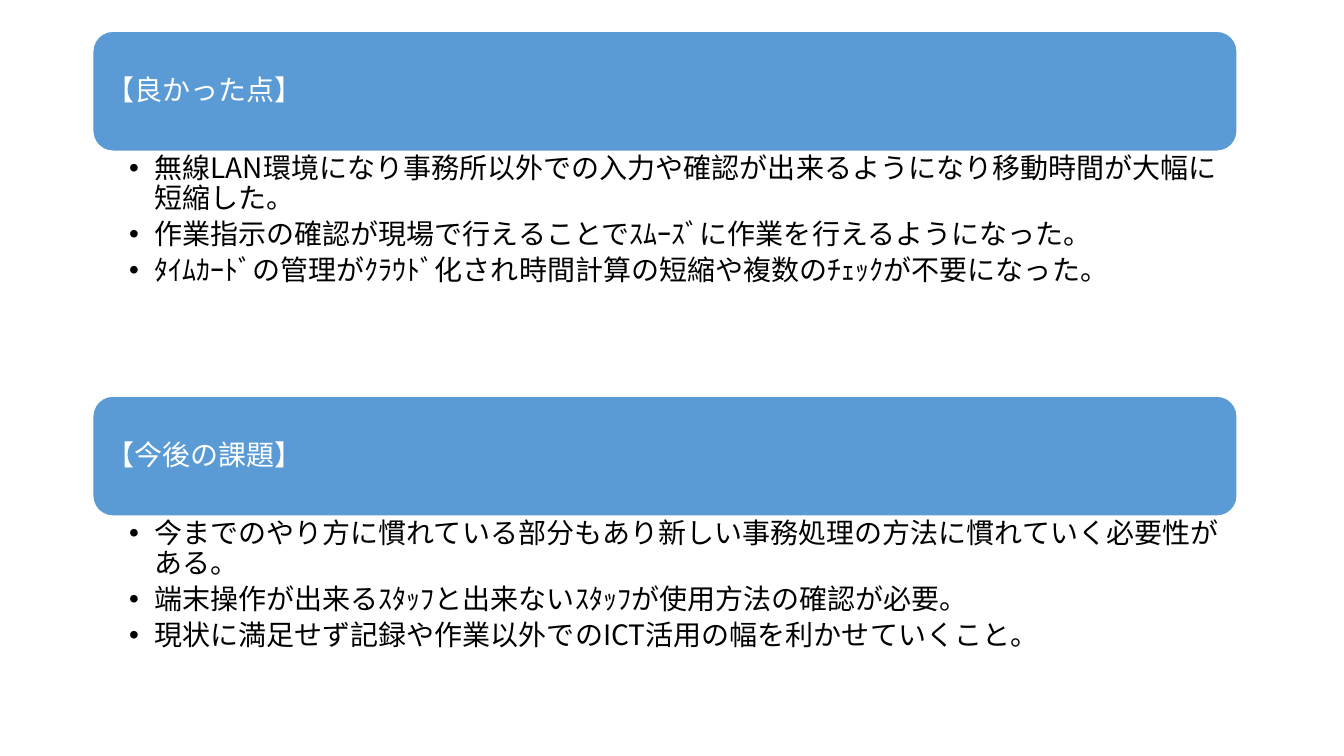
"""Build a slide of good points and open issues, each under a banner."""
from dataclasses import dataclass

from lxml import etree
from pptx import Presentation
from pptx.dml.color import RGBColor
from pptx.enum.shapes import MSO_SHAPE
from pptx.enum.text import MSO_ANCHOR, MSO_AUTO_SIZE, PP_ALIGN
from pptx.oxml.ns import qn
from pptx.util import Inches, Pt

ROUND = MSO_SHAPE.ROUNDED_RECTANGLE
TOP, MIDDLE = MSO_ANCHOR.TOP, MSO_ANCHOR.MIDDLE
LEFT = PP_ALIGN.LEFT
FIXED = MSO_AUTO_SIZE.NONE

PARTS = [
    ("【良かった点】", [
        "無線LAN環境になり事務所以外での入力や確認が出来るようになり移動時間が大幅に短縮した。",
        "作業指示の確認が現場で行えることでｽﾑｰｽﾞに作業を行えるようになった。",
        "ﾀｲﾑｶｰﾄﾞの管理がｸﾗｳﾄﾞ化され時間計算の短縮や複数のﾁｪｯｸが不要になった。",
    ], 2.43),
    ("【今後の課題】", [
        "今までのやり方に慣れている部分もあり新しい事務処理の方法に慣れていく必要性がある。",
        "端末操作が出来るｽﾀｯﾌと出来ないｽﾀｯﾌが使用方法の確認が必要。",
        "現状に満足せず記録や作業以外でのICT活用の幅を利かせていくこと。",
    ], 1.94),
]
SIDE, START, WIDTH, BANNER = 0.92, 0.31, 11.35, 1.19


@dataclass(frozen=True)
class Theme:
    """Colours and type."""
    fill: RGBColor = RGBColor(0x5B, 0x9B, 0xD5)
    white: RGBColor = RGBColor(0xFF, 0xFF, 0xFF)
    black: RGBColor = RGBColor(0, 0, 0)
    font: str = "Noto Sans CJK JP"
    size: int = 20


THEME = Theme()


def set_frame(frame, anchor, insets):
    """Set wrapping, anchor and insets of a text frame."""
    frame.word_wrap = True
    frame.auto_size = FIXED
    frame.vertical_anchor = anchor
    (frame.margin_left, frame.margin_top,
     frame.margin_right, frame.margin_bottom) = map(Inches, insets)


def style(para, color, after):
    """Set the type and spacing of a paragraph."""
    para.alignment = LEFT
    para.line_spacing = 0.9
    para.space_before = Pt(0)
    para.space_after = Pt(after * THEME.size)
    font = para.font
    font.size = Pt(THEME.size)
    font.color.rgb = color
    font.name = THEME.font
    props = para._p.pPr.find(qn("a:defRPr"))
    etree.SubElement(props, qn("a:ea"), typeface=THEME.font)
    return props


def add_banner(slide, top, text):
    """Draw a rounded banner with its heading."""
    shape = slide.shapes.add_shape(
        ROUND, Inches(SIDE), Inches(top), Inches(WIDTH), Inches(BANNER))
    shape.shadow.inherit = False
    shape.fill.solid()
    shape.fill.fore_color.rgb = THEME.fill
    shape.line.color.rgb = THEME.white
    shape.line.width = Pt(1)
    set_frame(shape.text_frame, MIDDLE, (0.08, 0.08, 0.08, 0.08))
    para = shape.text_frame.paragraphs[0]
    para.text = text
    style(para, THEME.white, 0.35)


def fill_list(body, top, height, items):
    """Place a body placeholder and fill it with bullets."""
    body.left, body.top = Inches(SIDE), Inches(top)
    body.width, body.height = Inches(WIDTH), Inches(height)
    frame = body.text_frame
    frame.text = "\n".join(items)
    set_frame(frame, TOP, (0.36, 0.03, 0.16, 0.03))
    for para in frame.paragraphs:
        props = style(para, THEME.black, 0.2)
        para._p.pPr.set("marL", str(Inches(0.25)))
        para._p.pPr.set("indent", str(Inches(-0.25)))
        mark = etree.Element(qn("a:buChar"), char="•")
        props.addprevious(mark)


def main():
    """Stack the parts down the slide and save it."""
    deck = Presentation()
    deck.slide_width, deck.slide_height = Inches(13.33), Inches(7.5)
    slide = deck.slides.add_slide(deck.slide_layouts[3])
    title, *bodies = slide.placeholders
    title.element.getparent().remove(title.element)
    top = START
    for body, (head, items, height) in zip(bodies[:len(PARTS)], PARTS):
        add_banner(slide, top, head)
        fill_list(body, top + BANNER, height, items)
        top += BANNER + height
    deck.save("out.pptx")


if __name__ == "__main__":
    main()
